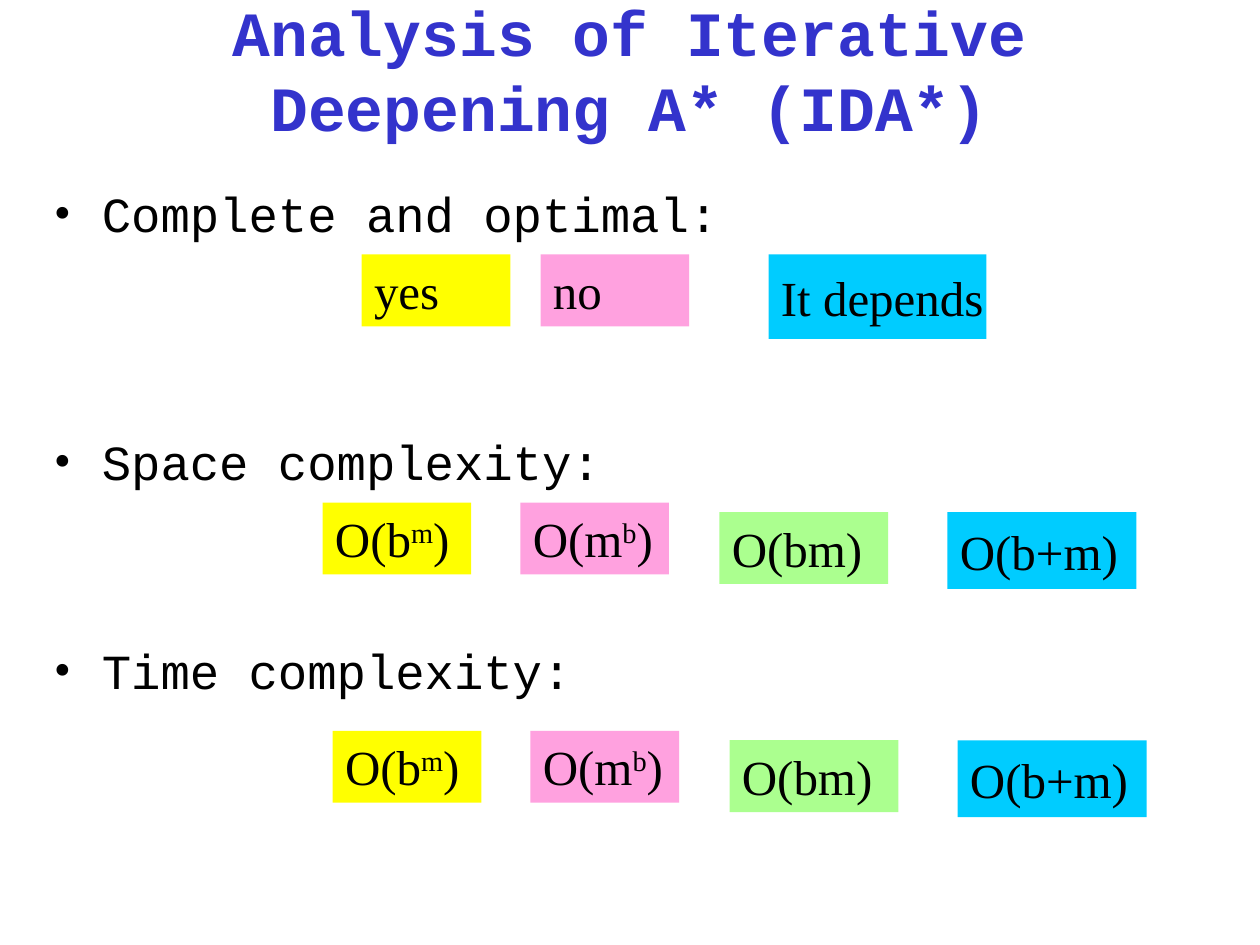
from dataclasses import dataclass

from lxml import etree
from pptx import Presentation
from pptx import util as u
from pptx.dml.color import RGBColor
from pptx.enum import shapes, text
from pptx.oxml import ns

COLUMNS, ROWS = 100, 75


@dataclass(frozen=True)
class Theme:
    title_color: str = "3333CC"
    text_color: str = "000000"
    # Fill colour and opacity in percent
    yellow: tuple = ("FFFF00", 100)
    pink: tuple = ("FF66CC", 61)
    green: tuple = ("66FF33", 55)
    cyan: tuple = ("00CCFF", 100)
    heading_font: str = "Courier New"
    answer_font: str = "Times New Roman"
    title_size: int = 36
    body_size: int = 28


def write(paragraph, content, *, font, size, color, bold=False):
    """Add runs to a paragraph; parts between bars are superscript."""
    for index, part in enumerate(content.split("|")):
        run = paragraph.add_run()
        run.text = part
        run.font.name = font
        run.font.size = u.Pt(size)
        run.font.bold = bold
        run.font.color.rgb = RGBColor.from_string(color)
        if index % 2:
            run.font._element.set("baseline", "30000")


class SlideBuilder:
    def __init__(self, presentation, theme):
        self.theme = theme
        self.column = presentation.slide_width / COLUMNS
        self.row = presentation.slide_height / ROWS
        layout = presentation.slide_layouts.get_by_name("Title Only")
        self.slide = presentation.slides.add_slide(layout)

    def box(self, left, top, width, height):
        """Turn grid columns and rows into slide lengths."""
        return (round(left * self.column), round(top * self.row),
                round(width * self.column), round(height * self.row))

    def title(self, content, *area):
        shape = self.slide.shapes.title
        shape.left, shape.top, shape.width, shape.height = self.box(*area)
        frame = shape.text_frame
        frame.auto_size = text.MSO_AUTO_SIZE.NONE
        frame.vertical_anchor = text.MSO_ANCHOR.MIDDLE
        paragraph = frame.paragraphs[0]
        paragraph.alignment = text.PP_ALIGN.CENTER
        write(paragraph, content, font=self.theme.heading_font,
              size=self.theme.title_size, color=self.theme.title_color, bold=True)

    def bullets(self, items, *area):
        """Add a bulleted list of (text, points of space before)."""
        frame = self.slide.shapes.add_textbox(*self.box(*area)).text_frame
        frame.word_wrap = True
        for index, (content, space) in enumerate(items):
            paragraph = frame.add_paragraph() if index else frame.paragraphs[0]
            properties = paragraph._p.get_or_add_pPr()
            indent = u.Inches(0.38)
            properties.set("marL", str(indent))
            properties.set("indent", str(-indent))
            etree.SubElement(properties, ns.qn("a:buFont"),
                             typeface=self.theme.answer_font)
            etree.SubElement(properties, ns.qn("a:buChar"), char="•")
            paragraph.space_before = u.Pt(space)
            write(paragraph, content, font=self.theme.heading_font,
                  size=self.theme.body_size, color=self.theme.text_color)

    def answer(self, content, fill, *area, centered=False):
        """Add a coloured answer box; a centred one keeps its text on one line."""
        color, opacity = fill
        shape = self.slide.shapes.add_shape(
            shapes.MSO_SHAPE.RECTANGLE, *self.box(*area))
        shape.shadow.inherit = False
        shape.line.fill.background()
        shape.fill.solid()
        shape.fill.fore_color.rgb = RGBColor.from_string(color)
        if opacity < 100:
            color_element = shape.element.spPr.find(".//" + ns.qn("a:srgbClr"))
            etree.SubElement(color_element, ns.qn("a:alpha"), val=str(opacity * 1000))
        frame = shape.text_frame
        frame.word_wrap = not centered
        frame.vertical_anchor = (
            text.MSO_ANCHOR.MIDDLE if centered else text.MSO_ANCHOR.TOP)
        paragraph = frame.paragraphs[0]
        paragraph.alignment = text.PP_ALIGN.LEFT
        write(paragraph, content, font=self.theme.answer_font,
              size=self.theme.body_size, color=self.theme.text_color)

    def complexity_answers(self, left, top):
        theme = self.theme
        lower = top + 0.75
        self.answer("O(b+m)", theme.cyan, left + 49.6, lower, 15, 6.1, centered=True)
        self.answer("O(b|m|)", theme.yellow, left, top, 11.8, 5.7)
        self.answer("O(bm)", theme.green, left + 31.5, lower, 13.4, 5.7)
        self.answer("O(m|b|)", theme.pink, left + 15.7, top, 11.8, 5.7)


def main():
    presentation = Presentation()
    presentation.slide_width, presentation.slide_height = u.Inches(10), u.Inches(7.5)
    theme = Theme()
    builder = SlideBuilder(presentation, theme)

    builder.title("Analysis of Iterative Deepening A* (IDA*)", 3.3, 1.7, 93.3, 7.5)
    builder.bullets([("Complete and optimal:", 0),
                     ("Space complexity:", 108),
                     ("Time complexity:", 86)], 3.3, 14.1, 92.5, 48.4)

    builder.answer("It depends", theme.cyan, 61, 20.2, 17.3, 6.7, centered=True)
    builder.answer("yes", theme.yellow, 28.7, 20.2, 11.8, 5.7)
    builder.answer("no", theme.pink, 42.9, 20.2, 11.8, 5.7)
    for left, top in ((25.6, 39.9), (26.4, 58)):
        builder.complexity_answers(left, top)

    presentation.save("out.pptx")


if __name__ == "__main__":
    main()
